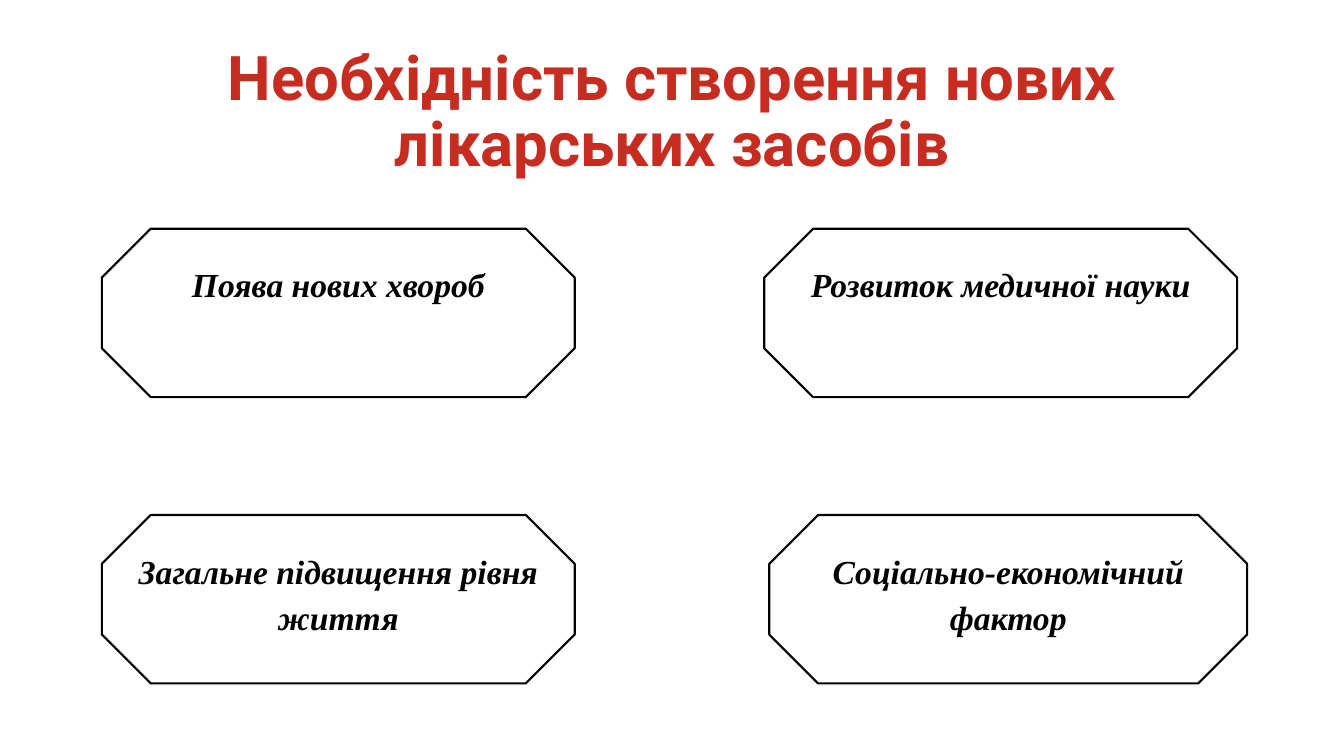
from pptx import Presentation
from pptx.dml.color import RGBColor
from pptx.enum.shapes import MSO_SHAPE
from pptx.enum.text import MSO_ANCHOR, PP_ALIGN
from pptx.util import Pt

PX = 9144
LEFT_COLUMN, TOP_ROW, BOTTOM_ROW = 101, 227, 511
FACTORS = [
    ("Поява нових хвороб", LEFT_COLUMN, TOP_ROW, 469),
    ("Розвиток медичної науки", 758, TOP_ROW, 469),
    ("Загальне підвищення рівня життя", LEFT_COLUMN, BOTTOM_ROW, 469),
    ("Соціально-економічний фактор", 763, BOTTOM_ROW, 474),
]


def color(value):
    """Turn a hex string into a colour."""
    return RGBColor.from_string(value)


def write(frame, text, font_name, size, ink, spacing, italic=False):
    """Write one centred bold paragraph into a text frame."""
    frame.word_wrap = True
    frame.text = text
    paragraph = frame.paragraphs[0]
    paragraph.alignment = PP_ALIGN.CENTER
    paragraph.line_spacing = spacing
    font = paragraph.runs[0].font
    font.name = font_name
    font.size = Pt(size)
    font.bold = True
    font.italic = italic
    font.color.rgb = color(ink)


def add_heading(slide, text):
    """Add the slide heading."""
    heading = slide.shapes.add_textbox(92 * PX, 40 * PX, 1150 * PX, 145 * PX)
    heading.text_frame.vertical_anchor = MSO_ANCHOR.MIDDLE
    write(heading.text_frame, text, "Roboto", 44, "C72C21", 0.9)


def add_factor(slide, text, left, top, width):
    """Add an outlined octagon that names one factor."""
    factor = slide.shapes.add_shape(
        MSO_SHAPE.OCTAGON, left * PX, top * PX, width * PX, 167 * PX)
    factor.adjustments[0] = 0.29
    factor.shadow.inherit = False
    factor.fill.solid()
    factor.fill.fore_color.rgb = color("FFFFFF")
    factor.line.color.rgb = color("000000")
    factor.line.width = Pt(1.5)
    factor.text_frame.vertical_anchor = MSO_ANCHOR.TOP
    write(factor.text_frame, text, "Times New Roman", 24, "000000", 1.15, italic=True)


def main():
    """Build and save the slide."""
    deck = Presentation()
    deck.slide_width, deck.slide_height = 1333 * PX, 750 * PX
    slide = deck.slides.add_slide(deck.slide_layouts[6])
    add_heading(slide, "Необхідність створення нових лікарських засобів")
    for factor in FACTORS:
        add_factor(slide, *factor)
    deck.save("out.pptx")


if __name__ == "__main__":
    main()
